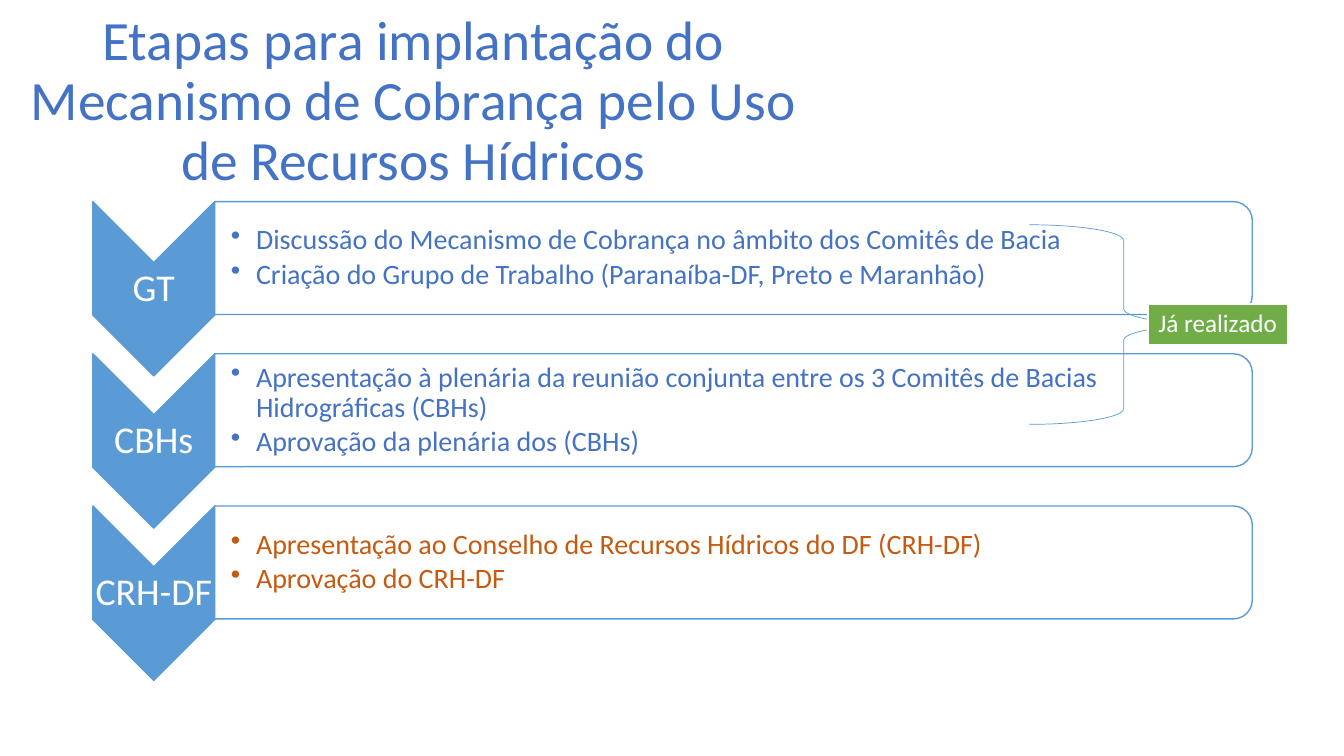
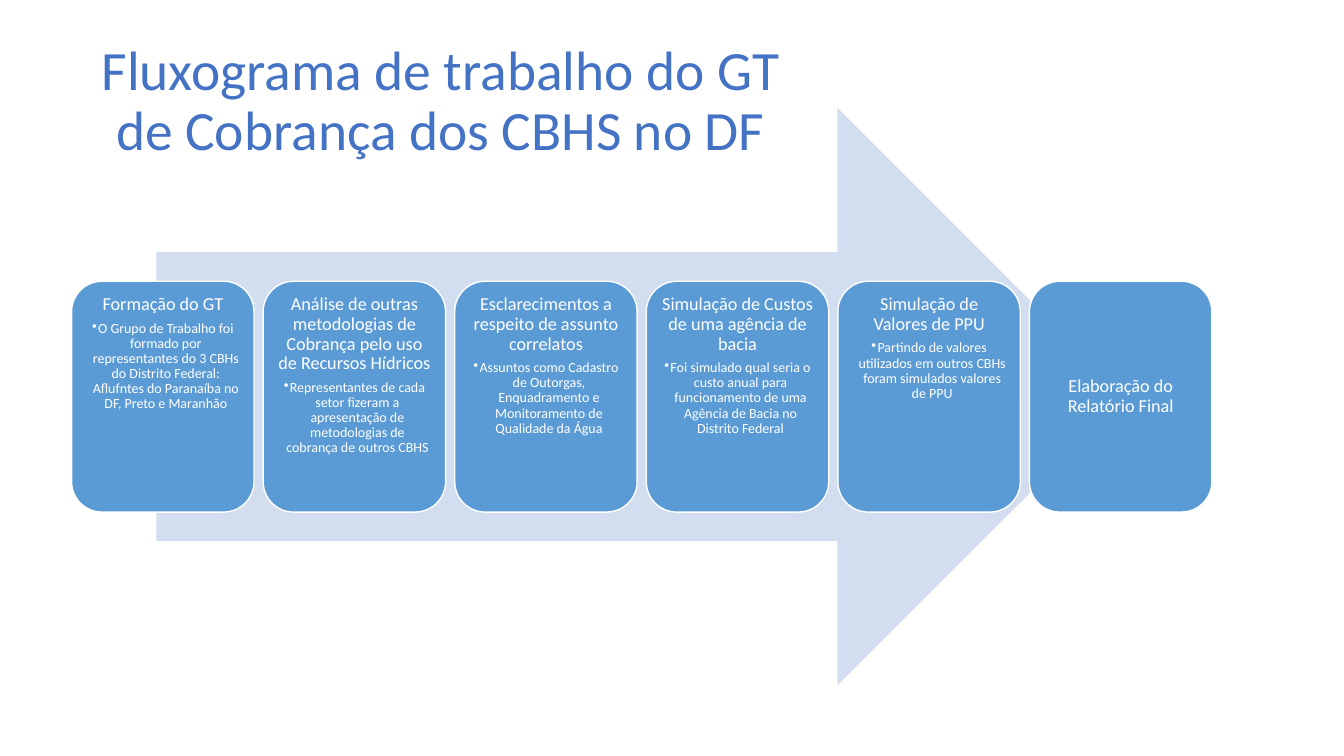
import lxml.etree
import pptx
import pptx.dml.color
import pptx.enum.shapes
import pptx.enum.text
import pptx.oxml.ns
import pptx.util

Inches, Pt = pptx.util.Inches, pptx.util.Pt
SHAPE = pptx.enum.shapes.MSO_SHAPE
ALIGN = pptx.enum.text.PP_ALIGN
ANCHOR = pptx.enum.text.MSO_ANCHOR
qn = pptx.oxml.ns.qn

COLORS = {name: pptx.dml.color.RGBColor.from_string(value) for name, value in {
    "blue": "5B9BD5", "title": "4472C4", "pending": "C55A11",
    "done": "70AD47", "pale": "D2DEEF", "white": "FFFFFF"}.items()}
FONT = "Calibri"
TITLE_TOP, TITLE_HEIGHT = 0.3, 1.44


def add_block(slide, geometry, left, top, width, height, fill=None, line=None,
              line_width=1, turned=False):
    """Add a shape covering the given area; turned rotates it by 90 degrees within it."""
    if turned:
        left, top = left + (width - height) / 2, top + (height - width) / 2
        width, height = height, width
    block = slide.shapes.add_shape(
        geometry, Inches(left), Inches(top), Inches(width), Inches(height))
    block.shadow.inherit = False
    block.rotation = 90 if turned else 0
    if fill:
        block.fill.solid()
        block.fill.fore_color.rgb = COLORS[fill]
    else:
        block.fill.background()
    if line:
        block.line.color.rgb = COLORS[line]
        block.line.width = Pt(line_width)
    else:
        block.line.fill.background()
    return block


def write(frame, paragraphs, margins, align=ALIGN.CENTER, anchor=ANCHOR.MIDDLE, wrap=True):
    """Fill a frame with (text, size, colour, space after, bullet indent) paragraphs."""
    frame.word_wrap = wrap
    frame.auto_size = pptx.enum.text.MSO_AUTO_SIZE.NONE
    frame.vertical_anchor = anchor
    (frame.margin_left, frame.margin_top,
     frame.margin_right, frame.margin_bottom) = map(Inches, margins)
    frame.text = "\n".join(paragraph[0] for paragraph in paragraphs)
    for paragraph, (_, size, color, after, indent) in zip(frame.paragraphs, paragraphs):
        paragraph.alignment = align
        paragraph.line_spacing = 0.9
        paragraph.space_after = Pt(after)
        if indent:
            properties = paragraph.runs[0]._r.getparent().get_or_add_pPr()
            properties.set("marL", str(Inches(indent)))
            properties.set("indent", str(-Inches(indent)))
            lxml.etree.SubElement(properties, qn("a:buChar")).set("char", "•")
        for run in paragraph.runs:
            run.font.name = FONT
            run.font.size = Pt(size)
            run.font.color.rgb = COLORS[color]


deck = pptx.Presentation()
deck.slide_width, deck.slide_height = Inches(13.33), Inches(7.5)

titles = [
    ("Etapas para implantação do Mecanismo de Cobrança pelo Uso de Recursos Hídricos", 0, 8.2),
    ("Fluxograma de trabalho do GT de Cobrança dos CBHS no DF", 0.71, 7.32),
]
for heading, left, width in titles:
    title = deck.slides.add_slide(deck.slide_layouts[5]).shapes.title
    title.left, title.top = Inches(left), Inches(TITLE_TOP)
    title.width, title.height = Inches(width), Inches(TITLE_HEIGHT)
    write(title.text_frame, [(heading, 39.6, "title", 0, 0)], (0.1, 0.05, 0.1, 0.05))
steps_slide, flow_slide = deck.slides

# Steps: one row per stage, a chevron column and a detail column
steps = [
    ("GT", "title", [
        "Discussão do Mecanismo de Cobrança no âmbito dos Comitês de Bacia",
        "Criação do Grupo de Trabalho (Paranaíba-DF, Preto e Maranhão)"]),
    ("CBHs", "title", [
        "Apresentação à plenária da reunião conjunta entre os 3 Comitês de Bacias "
        "Hidrográficas (CBHs)",
        "Aprovação da plenária dos (CBHs)"]),
    ("CRH-DF", "pending", [
        "Apresentação ao Conselho de Recursos Hídricos do DF (CRH-DF)",
        "Aprovação do CRH-DF"]),
]
STEP_LEFT, STEP_TOP, STEP_PITCH = 0.92, 2.0, 1.51
CHEVRON_WIDTH, CHEVRON_HEIGHT = 1.21, 1.73
DETAIL_WIDTH, DETAIL_HEIGHT = 10.29, 1.12
detail_left = STEP_LEFT + CHEVRON_WIDTH
for row, (stage, color, details) in enumerate(steps):
    top = STEP_TOP + row * STEP_PITCH
    add_block(steps_slide, SHAPE.CHEVRON, STEP_LEFT, top, CHEVRON_WIDTH, CHEVRON_HEIGHT,
              "blue", "blue", turned=True)
    panel = add_block(steps_slide, SHAPE.ROUND_2_SAME_RECTANGLE, detail_left, top,
                      DETAIL_WIDTH, DETAIL_HEIGHT, "white", "blue", turned=True)
    panel_color = panel._element.spPr.find(qn("a:solidFill"))[0]
    lxml.etree.SubElement(panel_color, qn("a:alpha")).set("val", "90000")

    stage_label = steps_slide.shapes.add_textbox(
        Inches(STEP_LEFT), Inches(top + CHEVRON_WIDTH / 2),
        Inches(CHEVRON_WIDTH), Inches(CHEVRON_HEIGHT - CHEVRON_WIDTH))
    write(stage_label.text_frame, [(stage, 27, "white", 0, 0)], (0.02,) * 4)
    detail_list = steps_slide.shapes.add_textbox(
        Inches(detail_left), Inches(top + 0.05),
        Inches(DETAIL_WIDTH - 0.05), Inches(DETAIL_HEIGHT - 0.1))
    write(detail_list.text_frame, [(detail, 20, color, 3, 0.25) for detail in details],
          (0.16, 0.01, 0.01, 0.01), ALIGN.LEFT)

add_block(steps_slide, SHAPE.RIGHT_BRACE, 10.21, 2.23, 1.87, 1.98,
          line="blue", line_width=0.5)
done_tag = add_block(steps_slide, SHAPE.RECTANGLE, 11.39, 3.02, 1.39, 0.4,
                     "done", "white", 1.5)
write(done_tag.text_frame, [("Já realizado", 18, "white", 0, 0)],
      (0.1, 0.05, 0.1, 0.05), ALIGN.LEFT, wrap=False)

# Flow: equal cards in a row over a wide arrow
activities = [
    ("Formação do GT",
     "O Grupo de Trabalho foi formado por representantes do 3 CBHs do Distrito Federal: "
     "Aflufntes do Paranaíba no DF, Preto e Maranhão"),
    ("Análise de outras metodologias de Cobrança pelo uso de Recursos Hídricos",
     "Representantes de cada setor fizeram a apresentação de metodologias de cobrança "
     "de outros CBHS"),
    ("Esclarecimentos a respeito de assunto correlatos",
     "Assuntos como Cadastro de Outorgas, Enquadramento e Monitoramento de "
     "Qualidade da Água"),
    ("Simulação de Custos de uma agência de bacia",
     "Foi simulado qual seria o custo anual para funcionamento de uma Agência de Bacia "
     "no Distrito Federal"),
    ("Simulação de Valores de PPU",
     "Partindo de valores utilizados em outros CBHs foram simulados valores de PPU"),
    ("Elaboração do Relatório Final", None),
]
CARD_LEFT, CARD_TOP, CARD_PITCH = 0.71, 2.79, 1.9
CARD_WIDTH, CARD_HEIGHT = 1.81, 2.29
add_block(flow_slide, SHAPE.RIGHT_ARROW, 1.55, 1.07, 9.62, 5.73, "pale")
for column, (activity, detail) in enumerate(activities):
    card = add_block(flow_slide, SHAPE.ROUNDED_RECTANGLE, CARD_LEFT + column * CARD_PITCH,
                     CARD_TOP, CARD_WIDTH, CARD_HEIGHT, "blue", "white")
    lines = [(activity, 13, "white", 4.5, 0)]
    if detail:
        lines.append((detail, 10, "white", 1.5, 0.06))
    write(card.text_frame, lines, (0.05,) * 4,
          anchor=ANCHOR.TOP if detail else ANCHOR.MIDDLE)

deck.save("out.pptx")
